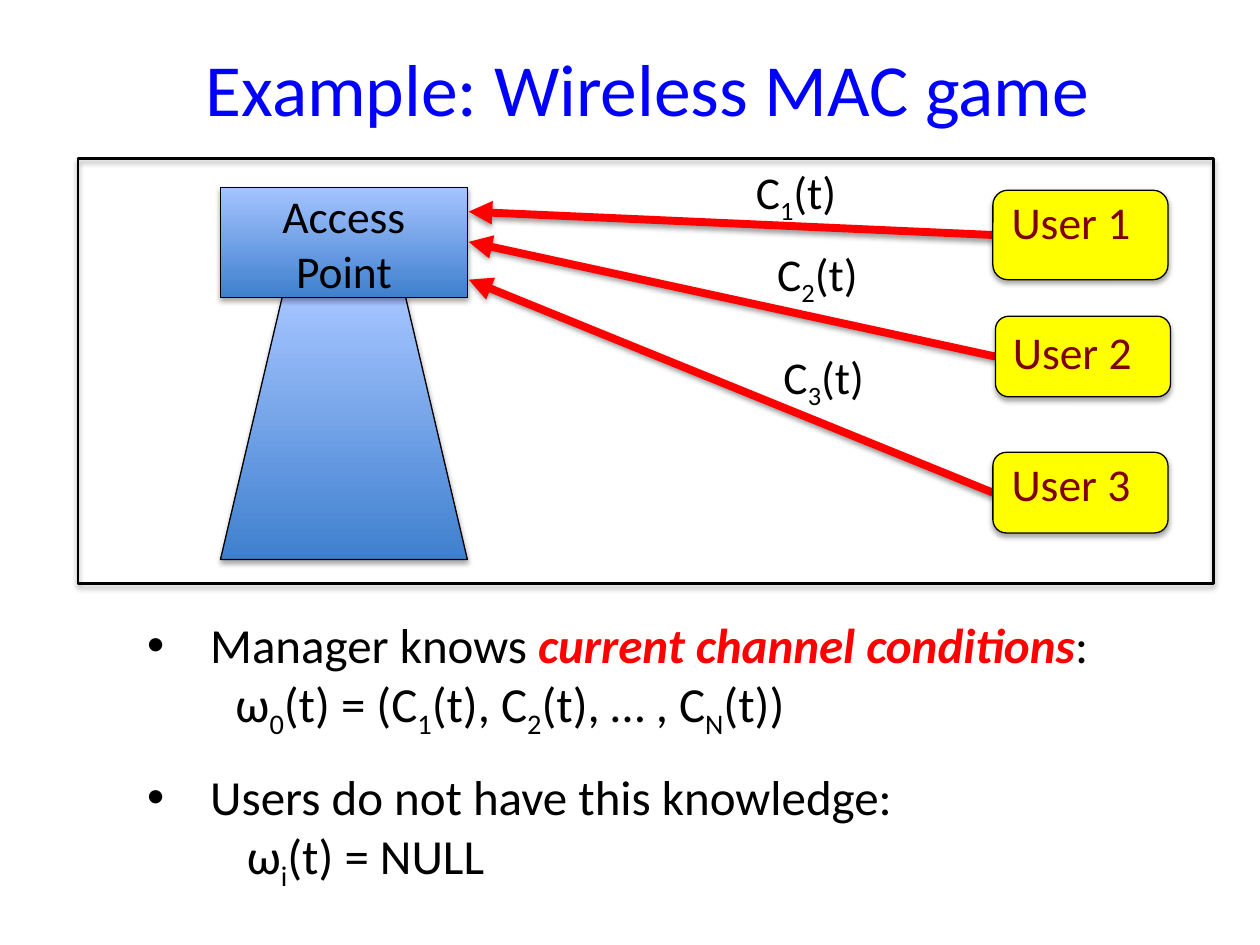
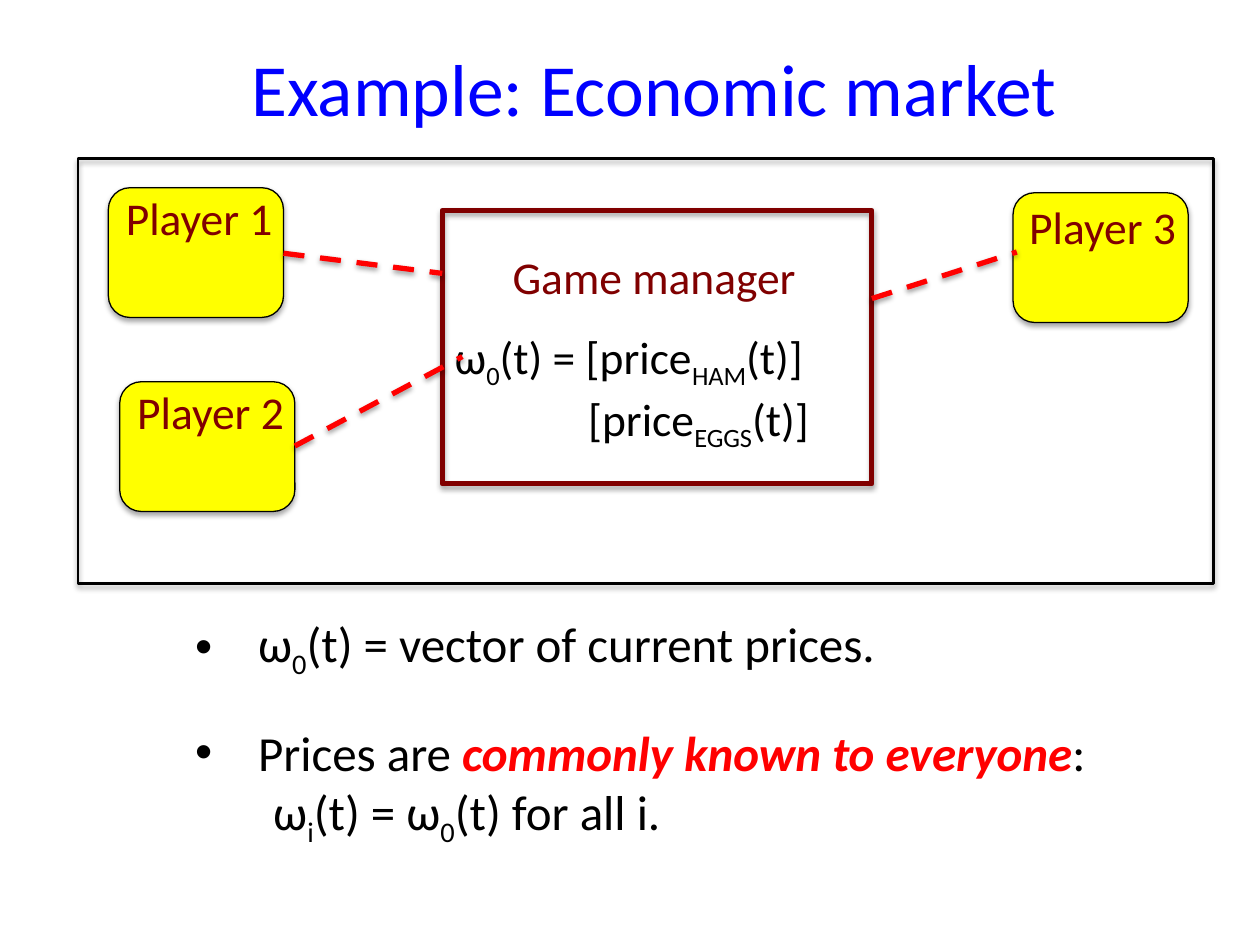
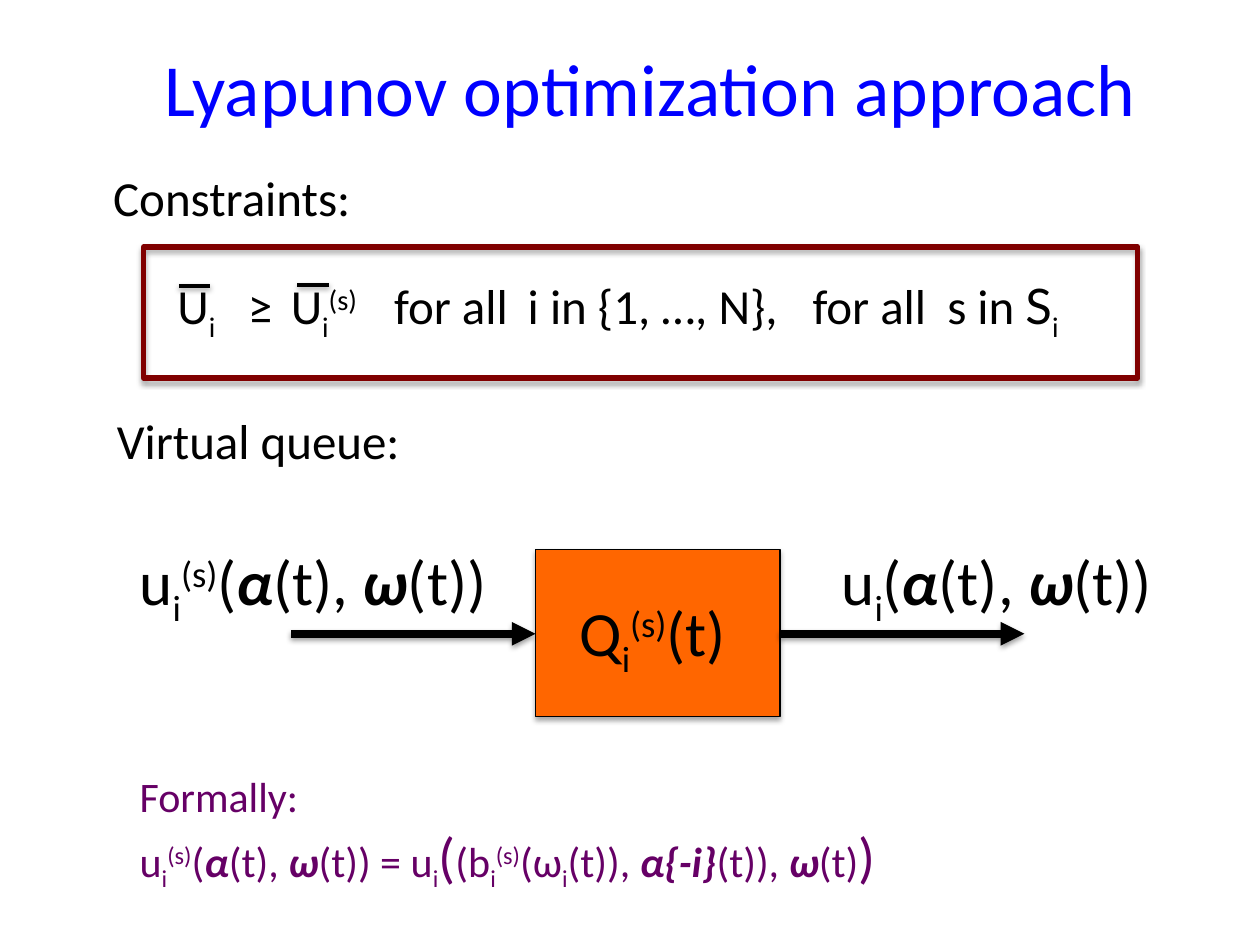
from dataclasses import dataclass
from typing import NamedTuple

import lxml.etree
import pptx
import pptx.dml.color
import pptx.enum.dml
import pptx.enum.shapes
import pptx.enum.text
import pptx.oxml
import pptx.oxml.ns
import pptx.util
from pptx.util import Inches

FONT = "Calibri"
BLACK, BLUE, RED = "000000", "0000FF", "FF0000"
MAROON, YELLOW, ORANGE, PURPLE = "800000", "FFFF00", "FF6600", "660066"
SKY_BOTTOM, SKY_TOP = "3F80CE", "A4C4FF"
SHAPES = pptx.enum.shapes.MSO_SHAPE
TITLE_ONLY = 5


class Area(NamedTuple):
    left: float
    top: float
    width: float
    height: float


class Point(NamedTuple):
    left: float
    top: float


class Span(NamedTuple):
    text: str
    baseline: int = 0
    strong: bool = False
    color: str | None = None
    size: int | None = None
    font: str = FONT


@dataclass
class Line:
    spans: list[Span]
    bullet: bool = False
    indent: float = 0
    before: float = 0
    tabs: tuple[float, ...] = ()


@dataclass
class Member:
    name: str
    body: Area
    label: Area


PANEL = Area(0.62, 1.26, 9.01, 3.37)
USERS = [
    Member("User 1", Area(7.88, 1.51, 1.39, 0.71), Area(7.93, 1.49, 1.15, 0.54)),
    Member("User 2", Area(7.9, 2.51, 1.39, 0.64), Area(7.94, 2.52, 1.15, 0.54)),
    Member("User 3", Area(7.88, 3.59, 1.39, 0.64), Area(7.93, 3.57, 1.15, 0.54)),
]
PLAYERS = [
    Member("Player 1", Area(0.86, 1.49, 1.39, 1.03), Area(0.9, 1.46, 1.39, 0.54)),
    Member("Player 2", Area(0.95, 3.03, 1.39, 1.03), Area(0.99, 3, 1.39, 0.54)),
    Member("Player 3", Area(8.04, 1.53, 1.39, 1.03), Area(8.07, 1.53, 1.39, 0.54)),
]


def sub(text: str) -> Span:
    return Span(text, baseline=-25)


def sup(text: str) -> Span:
    return Span(text, baseline=30)


def strong(text: str, color: str | None = None) -> Span:
    return Span(text, strong=True, color=color)


def indexed(name: str, index: str, rest: str) -> list[Span]:
    return [Span(name), sub(index), Span(rest)]


def state_arguments(ending: str = "(t))") -> list[Span]:
    return [Span("("), strong("α"), Span("(t), "), strong("ω"), Span(ending)]


def rgb(color: str) -> pptx.dml.color.RGBColor:
    return pptx.dml.color.RGBColor.from_string(color)


def lengths(area: Area) -> list[pptx.util.Length]:
    return [Inches(value) for value in area]


def add_xml(parent, tag: str, **attributes: str):
    return lxml.etree.SubElement(parent, pptx.oxml.ns.qn(tag), attributes)


def add_shadow(shape, opacity: int, distance: float) -> None:
    properties = shape._element.spPr
    for old in properties.findall(pptx.oxml.ns.qn("a:effectLst")):
        properties.remove(old)
    effects = add_xml(properties, "a:effectLst")
    shadow = add_xml(
        effects, "a:outerShdw", blurRad=str(pptx.util.Pt(3.1)),
        dist=str(pptx.util.Pt(distance)), dir="5400000", rotWithShape="0")
    add_xml(add_xml(shadow, "a:srgbClr", val=BLACK), "a:alpha", val=str(opacity * 1000))


def format_run(run, span: Span, size: int, color: str) -> None:
    run.font.name = span.font
    run.font.size = pptx.util.Pt(span.size or size)
    run.font.color.rgb = rgb(span.color or color)
    run.font.bold = run.font.italic = span.strong
    if span.baseline:
        run.font._element.set("baseline", str(span.baseline * 1000))


def format_paragraph(para, line: Line) -> None:
    para.space_before = pptx.util.Pt(line.before)
    properties = para._p.get_or_add_pPr()
    if line.bullet:
        properties.set("marL", str(Inches(0.5)))
        properties.set("indent", str(-Inches(0.5)))
        add_xml(properties, "a:buFont", typeface="Arial")
        add_xml(properties, "a:buChar", char="•")
    elif line.indent:
        properties.set("marL", str(Inches(line.indent)))
        properties.set("indent", "0")
    if line.tabs:
        stops = add_xml(properties, "a:tabLst")
        for stop in line.tabs:
            add_xml(stops, "a:tab", pos=str(Inches(stop)), algn="l")


def add_text(slide, area: Area, lines: list[Line], size: int,
             color: str = BLACK, wrap: bool = False) -> None:
    frame = slide.shapes.add_textbox(*lengths(area)).text_frame
    frame.word_wrap = wrap
    frame.auto_size = pptx.enum.text.MSO_AUTO_SIZE.SHAPE_TO_FIT_TEXT
    for number, line in enumerate(lines):
        para = frame.add_paragraph() if number else frame.paragraphs[0]
        format_paragraph(para, line)
        for span in line.spans:
            run = para.add_run()
            run.text = span.text
            format_run(run, span, size, color)


def add_label(slide, area: Area, text: str, size: int = 26, color: str = MAROON) -> None:
    add_text(slide, area, [Line([Span(text)])], size, color)


def add_block(slide, kind, area: Area, fill: str | None = None,
              line: str = BLACK, weight: float = 0.75):
    shape = slide.shapes.add_shape(kind, *lengths(area))
    if fill:
        shape.fill.solid()
        shape.fill.fore_color.rgb = rgb(fill)
    else:
        shape.fill.background()
    shape.line.color.rgb = rgb(line)
    shape.line.width = pptx.util.Pt(weight)
    add_shadow(shape, 35, 1.8)
    return shape


def add_sky_block(slide, kind, area: Area):
    shape = add_block(slide, kind, area)
    shape.fill.gradient()
    shape.fill.gradient_angle = 90
    for stop, color in zip(shape.fill.gradient_stops, (SKY_BOTTOM, SKY_TOP)):
        stop.color.rgb = rgb(color)
    return shape


def add_line(slide, start: Point, end: Point, color: str, weight: float,
             arrow: bool = False, dashed: bool = False) -> None:
    connector = slide.shapes.add_connector(
        pptx.enum.shapes.MSO_CONNECTOR.STRAIGHT,
        *(Inches(value) for value in (*start, *end)))
    connector.line.color.rgb = rgb(color)
    connector.line.width = pptx.util.Pt(weight)
    if dashed:
        connector.line.dash_style = pptx.enum.dml.MSO_LINE_DASH_STYLE.DASH
    if arrow:
        add_xml(connector.line._get_or_add_ln(), "a:tailEnd", type="triangle")
    add_shadow(connector, 38, 1.6)


def add_member(slide, member: Member) -> None:
    add_block(slide, SHAPES.ROUNDED_RECTANGLE, member.body, YELLOW)
    add_label(slide, member.label, member.name)


def add_panel(slide) -> None:
    add_block(slide, SHAPES.RECTANGLE, PANEL, weight=1.5)


def add_titled_slide(deck, title: str, left: float, width: float):
    slide = deck.slides.add_slide(deck.slide_layouts[TITLE_ONLY])
    box = slide.shapes.title
    box.left, box.top, box.width, box.height = lengths(Area(left, 0.29, width, 0.81))
    frame = box.text_frame
    frame.text = title
    frame.word_wrap = False
    frame.auto_size = pptx.enum.text.MSO_AUTO_SIZE.NONE
    frame.vertical_anchor = pptx.enum.text.MSO_ANCHOR.TOP
    format_run(frame.paragraphs[0].runs[0], Span(title), 42, BLUE)
    return slide


def build_wireless(deck) -> None:
    slide = add_titled_slide(deck, "Example: Wireless MAC game", 1.48, 7.32)
    channels = [Span("(t) = (C"), sub("1"), Span("(t), C"), sub("2"),
                Span("(t), … , C"), sub("N"), Span("(t))")]
    add_text(slide, Area(1.07, 4.83, 8.55, 2.18), [
        Line([Span("Manager knows "), strong("current channel conditions", RED),
              Span(":")], bullet=True),
        Line([Span("ω"), sub("0"), *channels], indent=0.7),
        Line([Span("Users do not have this knowledge:")], bullet=True, before=15),
        Line(indexed("ω", "i", "(t) = NULL"), indent=0.79),
    ], 28, wrap=True)
    add_panel(slide)
    add_sky_block(slide, SHAPES.TRAPEZOID, Area(1.75, 2.36, 1.96, 2.08))
    access_point = add_sky_block(slide, SHAPES.RECTANGLE, Area(1.75, 1.49, 1.96, 0.87))
    frame = access_point.text_frame
    frame.text = "Access Point"
    frame.word_wrap = True
    frame.vertical_anchor = pptx.enum.text.MSO_ANCHOR.MIDDLE
    para = frame.paragraphs[0]
    para.alignment = pptx.enum.text.PP_ALIGN.CENTER
    format_run(para.runs[0], Span("Access Point"), 26, BLACK)

    arrivals = (1.68, 1.92, 2.22)
    channel_labels = (Point(5.9, 1.25), Point(6.07, 1.9), Point(6.12, 2.72))
    for number, (user, arrival, corner) in enumerate(
            zip(USERS, arrivals, channel_labels), start=1):
        middle = user.body.top + user.body.height / 2
        add_line(slide, Point(user.body.left, middle), Point(3.72, arrival),
                 RED, 4.5, arrow=True)
        add_member(slide, user)
        add_text(slide, Area(*corner, 0.86, 0.54),
                 [Line(indexed("C", str(number), "(t)"))], 26)


def build_market(deck) -> None:
    slide = add_titled_slide(deck, "Example: Economic market", 1.84, 6.7)
    add_text(slide, Area(1.45, 4.82, 8.55, 1.85), [
        Line(indexed("ω", "0", "(t) = vector of current prices."), bullet=True),
        Line([Span("Prices are "), strong("commonly known to everyone", RED),
              Span(":")], bullet=True, before=24),
        Line([*indexed("ω", "i", "(t) = ω"), sub("0"), Span("(t) for all i.")],
             indent=0.62),
    ], 28, wrap=True)
    add_panel(slide)
    for player in PLAYERS:
        add_member(slide, player)
    add_label(slide, Area(3.97, 1.93, 2.47, 0.54), "Game manager")
    add_text(slide, Area(3.51, 2.56, 3.2, 0.98), [
        Line([*indexed("ω", "0", "(t) = [price"), sub("HAM"), Span("(t)]")]),
        Line(indexed("[price", "EGGS", "(t)]"), indent=1.06),
    ], 26)
    add_block(slide, SHAPES.RECTANGLE, Area(3.51, 1.67, 3.41, 2.17),
              line=MAROON, weight=3)
    for start, end in (
        (Point(2.25, 2.01), Point(3.51, 2.17)),
        (Point(2.34, 3.54), Point(3.67, 2.83)),
        (Point(6.92, 2.37), Point(8.07, 2)),
    ):
        add_line(slide, start, end, RED, 3, dashed=True)


def build_lyapunov(deck) -> None:
    slide = add_titled_slide(deck, "Lyapunov optimization approach", 1.14, 8.04)
    add_label(slide, Area(0.8, 1.28, 2.12, 0.57), "Constraints:", 28, BLACK)
    add_text(slide, Area(1.31, 2.14, 7.71, 0.57), [
        Line([Span("U"), sub("i"), Span("\t≥\tU"), sub("i"), sup("(s)"),
              Span("\tfor all\ti in {1, …, N},\tfor all\ts in "),
              Span("S", font="Lato"), sub("i")],
             tabs=(0.56, 0.9, 1.72, 2.78, 5.04, 6.11)),
    ], 28, wrap=True)
    for left, top in ((1.42, 2.27), (2.36, 2.26)):
        add_line(slide, Point(left, top), Point(left + 0.25, top), BLACK, 2)
    add_block(slide, SHAPES.RECTANGLE, Area(1.14, 1.96, 7.89, 1.04),
              line=MAROON, weight=3)

    add_label(slide, Area(0.83, 3.21, 2.47, 0.57), "Virtual queue:", 28, BLACK)
    queue = Area(4.25, 4.36, 1.94, 1.33)
    add_block(slide, SHAPES.RECTANGLE, queue, ORANGE)
    add_text(slide, Area(4.5, 4.66, 1.43, 0.71),
             [Line([Span("Q"), sub("i"), sup("(s)"), Span("(t)")])], 36)
    add_text(slide, Area(6.58, 4.26, 2.7, 0.71),
             [Line([Span("u"), sub("i"), *state_arguments()])], 36)
    for left in (queue.left - queue.width, queue.left + queue.width):
        add_line(slide, Point(left, 5.03), Point(left + queue.width, 5.03),
                 BLACK, 4.5, arrow=True)
    arrival = [Span("u"), sub("i"), sup("(s)")]
    add_text(slide, Area(1.01, 4.26, 3.03, 0.71),
             [Line([*arrival, *state_arguments()])], 36)
    add_text(slide, Area(1.01, 6.07, 8.26, 1.4), [
        Line([Span("Formally:")]),
        Line([*arrival, *state_arguments("(t)) = u"), sub("i"), Span("(", size=32),
              Span("(b"), sub("i"), sup("(s)"), *indexed("(ω", "i", "(t)), "),
              strong("α{-i}"), Span("(t)), "), strong("ω"), Span("(t)"),
              Span(")", size=32)]),
    ], 24, PURPLE, wrap=True)


def main() -> None:
    deck = pptx.Presentation()
    deck.slide_width, deck.slide_height = Inches(10), Inches(7.5)
    build_wireless(deck)
    build_market(deck)
    build_lyapunov(deck)
    deck.save("out.pptx")


if __name__ == "__main__":
    main()
